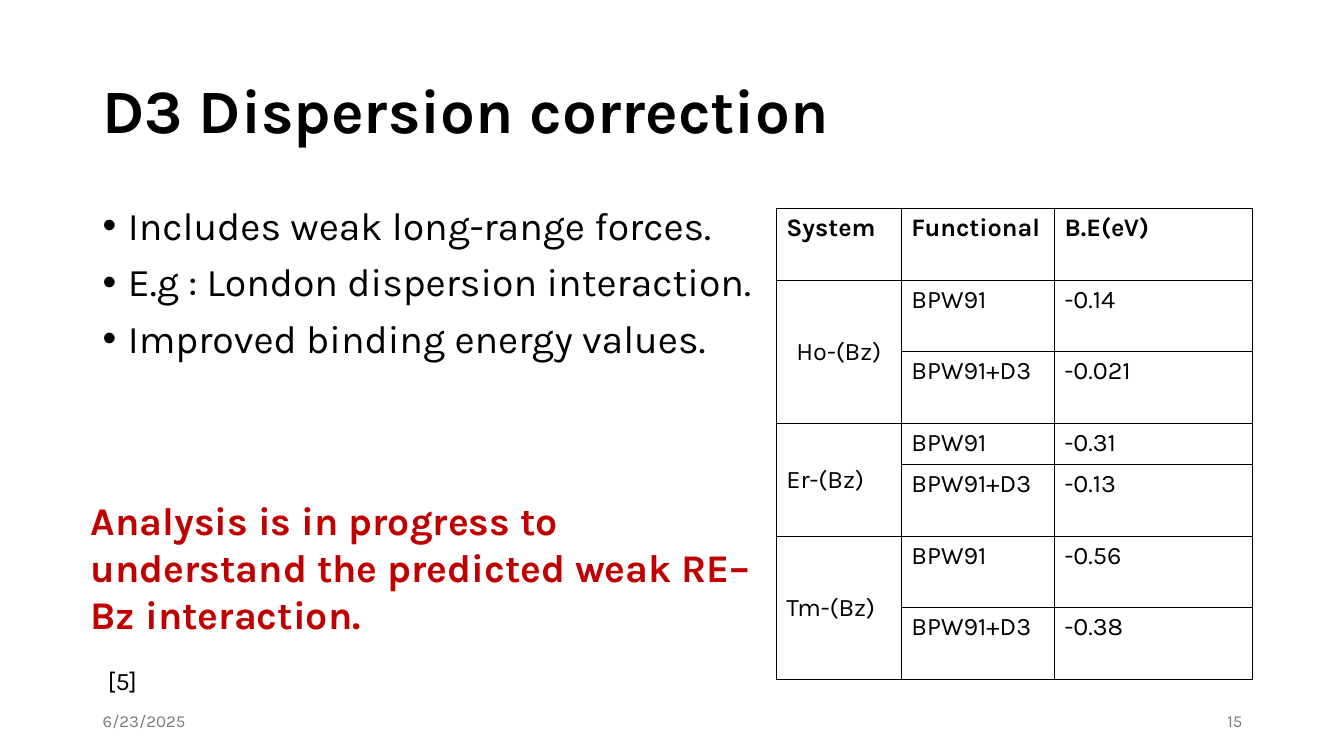
from dataclasses import dataclass

from lxml.etree import SubElement
from pptx import Presentation
from pptx.dml.color import RGBColor
from pptx.enum.text import MSO_ANCHOR, PP_ALIGN
from pptx.oxml.ns import qn
from pptx.slide import Slide
from pptx.table import _Cell
from pptx.text.text import _Paragraph
from pptx.util import Inches, Pt

FONT = "Karla"
COLORS = {"text": "000000", "accent": "C00000", "footer": "797979", "cell": "FFFFFF"}
COLUMN_WIDTHS = [1.24, 1.52, 1.96]
HEADERS = ["System", "Functional", "B.E(eV)"]
FUNCTIONALS = ["BPW91", "BPW91+D3"]
TALL_ROW, SHORT_ROW = 0.71, 0.41


@dataclass
class TextBlock:
    lines: list[str]
    left: float
    top: float
    width: float
    height: float
    size: int
    color: str = "text"
    bold: bool = False
    anchor: MSO_ANCHOR = MSO_ANCHOR.TOP
    align: PP_ALIGN = PP_ALIGN.LEFT
    line_spacing: float = 1.0
    bulleted: bool = False


@dataclass
class BindingEnergies:
    system: str
    energies: list[str]
    align: PP_ALIGN = PP_ALIGN.LEFT


TEXT_BLOCKS = [
    TextBlock(["D3 Dispersion correction"], 0.92, 0.4, 11.5, 1.45, 44, bold=True,
              anchor=MSO_ANCHOR.MIDDLE, line_spacing=0.9),
    TextBlock(["Includes weak long-range forces.",
               "E.g : London dispersion interaction.",
               "Improved binding energy values."],
              0.92, 2, 11.87, 4.68, 28, line_spacing=0.9, bulleted=True),
    TextBlock(["Analysis is in progress to understand the predicted weak RE–Bz interaction."],
              0.8, 4.87, 7.01, 1.04, 28, "accent", bold=True),
    TextBlock(["6/23/2025"], 0.92, 6.95, 3, 0.4, 12, "footer", anchor=MSO_ANCHOR.MIDDLE),
    TextBlock(["15"], 9.42, 6.95, 3, 0.4, 12, "footer", anchor=MSO_ANCHOR.MIDDLE,
              align=PP_ALIGN.RIGHT),
    TextBlock(["[5]"], 0.97, 6.55, 6.67, 0.4, 18),
]
SYSTEMS = [
    BindingEnergies("Ho-(Bz)", ["-0.14", "-0.021"], PP_ALIGN.CENTER),
    BindingEnergies("Er-(Bz)", ["-0.31", "-0.13"]),
    BindingEnergies("Tm-(Bz)", ["-0.56", "-0.38"]),
]


def style_font(paragraph: _Paragraph, size: int, color: str, bold: bool) -> None:
    font = paragraph.font
    font.name = FONT
    font.size = Pt(size)
    font.bold = bold
    font.color.rgb = RGBColor.from_string(COLORS[color])


def add_bullet(paragraph: _Paragraph) -> None:
    paragraph.space_before = Pt(10)
    properties = paragraph._p.get_or_add_pPr()
    properties.set("marL", str(Inches(0.25)))
    properties.set("indent", str(Inches(-0.25)))
    bullet_font = properties.makeelement(qn("a:buFont"), {"typeface": "Arial"})
    bullet = properties.makeelement(qn("a:buChar"), {"char": "•"})
    default_run = properties.find(qn("a:defRPr"))
    default_run.addprevious(bullet_font)
    default_run.addprevious(bullet)


def add_text(slide: Slide, block: TextBlock) -> None:
    shape = slide.shapes.add_textbox(Inches(block.left), Inches(block.top),
                                     Inches(block.width), Inches(block.height))
    frame = shape.text_frame
    frame.word_wrap = True
    frame.vertical_anchor = block.anchor
    frame.text = "\n".join(block.lines)
    for paragraph in frame.paragraphs:
        paragraph.alignment = block.align
        paragraph.line_spacing = block.line_spacing
        style_font(paragraph, block.size, block.color, block.bold)
        if block.bulleted:
            add_bullet(paragraph)


def add_borders(cell: _Cell) -> None:
    properties = cell._tc.get_or_add_tcPr()
    for position, side in enumerate(("a:lnL", "a:lnR", "a:lnT", "a:lnB")):
        line = properties.makeelement(qn(side), {"w": str(Pt(1))})
        properties.insert(position, line)
        fill = SubElement(line, qn("a:solidFill"))
        SubElement(fill, qn("a:srgbClr"), {"val": COLORS["text"]})


def fill_cell(cell: _Cell, text: str, bold: bool = False,
              align: PP_ALIGN = PP_ALIGN.LEFT) -> None:
    cell.text = text
    paragraph = cell.text_frame.paragraphs[0]
    paragraph.alignment = align
    style_font(paragraph, 18, "text", bold)


def add_energy_table(slide: Slide) -> None:
    row_count = 1 + len(SYSTEMS) * len(FUNCTIONALS)
    heights = [TALL_ROW] * row_count
    heights[3] = SHORT_ROW
    frame = slide.shapes.add_table(row_count, len(HEADERS), Inches(7.7), Inches(2.07),
                                   Inches(sum(COLUMN_WIDTHS)), Inches(sum(heights)))
    table = frame.table
    for column, width in zip(table.columns, COLUMN_WIDTHS):
        column.width = Inches(width)
    for row, height in zip(table.rows, heights):
        row.height = Inches(height)
    for cell in table.iter_cells():
        cell.fill.solid()
        cell.fill.fore_color.rgb = RGBColor.from_string(COLORS["cell"])
        add_borders(cell)

    for column_index, header in enumerate(HEADERS):
        fill_cell(table.cell(0, column_index), header, bold=True)
    for system_index, entry in enumerate(SYSTEMS):
        first_row = 1 + system_index * len(FUNCTIONALS)
        system_cell = table.cell(first_row, 0)
        system_cell.merge(table.cell(first_row + len(FUNCTIONALS) - 1, 0))
        system_cell.vertical_anchor = MSO_ANCHOR.MIDDLE
        fill_cell(system_cell, entry.system, align=entry.align)
        for offset, (functional, energy) in enumerate(zip(FUNCTIONALS, entry.energies)):
            fill_cell(table.cell(first_row + offset, 1), functional)
            fill_cell(table.cell(first_row + offset, 2), energy)


def main() -> None:
    presentation = Presentation()
    presentation.slide_width = Inches(13.33)
    presentation.slide_height = Inches(7.5)
    slide = presentation.slides.add_slide(presentation.slide_layouts[6])
    for block in TEXT_BLOCKS:
        add_text(slide, block)
    add_energy_table(slide)
    presentation.save("out.pptx")


if __name__ == "__main__":
    main()
